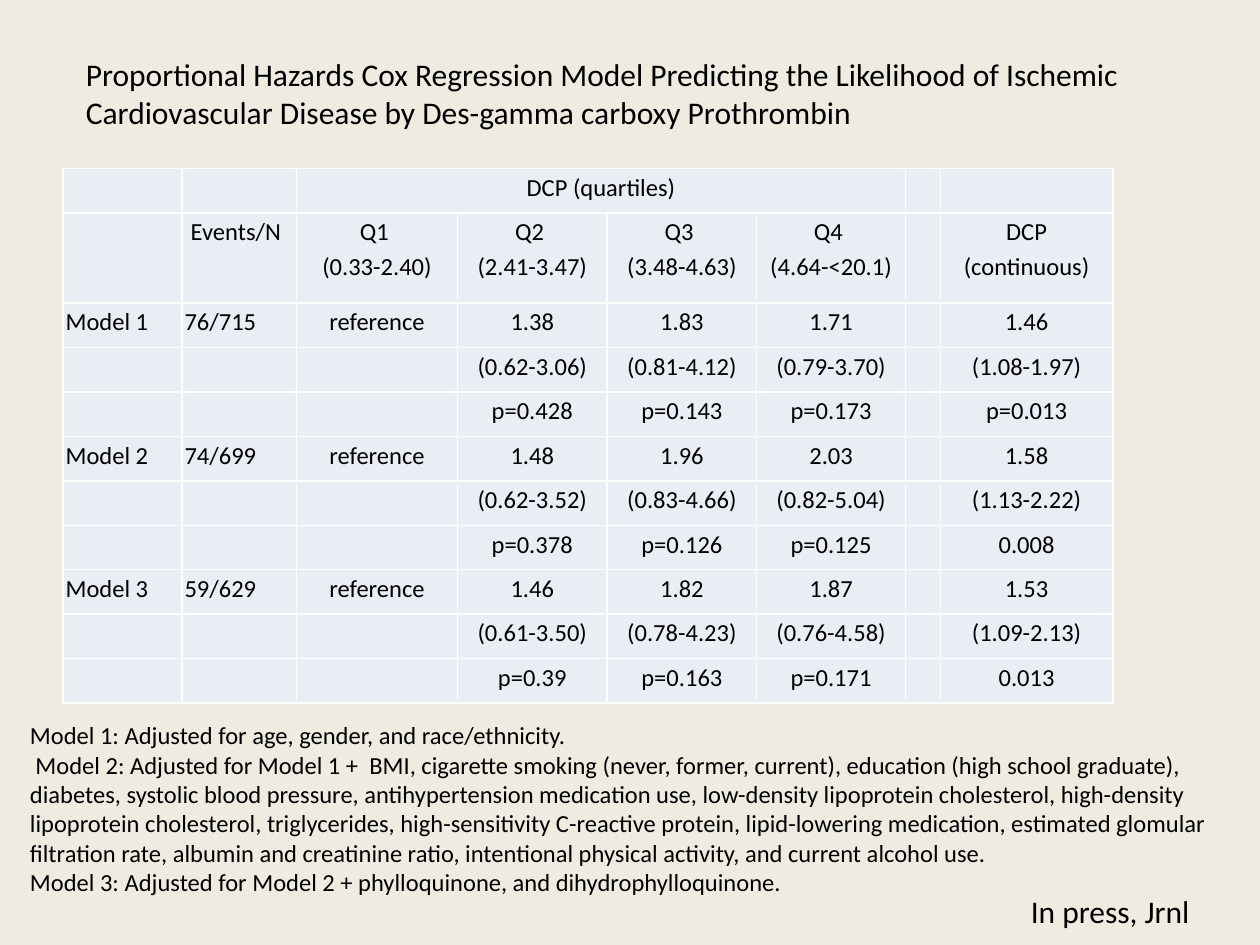
import pptx
import pptx.dml.color
import pptx.enum.text
import pptx.oxml
import pptx.oxml.ns
import pptx.util

Pt = pptx.util.Pt
RGBColor = pptx.dml.color.RGBColor
ALIGN = pptx.enum.text.PP_ALIGN

BACKGROUND = RGBColor(0xEE, 0xEC, 0xE1)
CELL_FILL = RGBColor(0xE9, 0xED, 0xF4)
BORDER = RGBColor(0xFF, 0xFF, 0xFF)
BLACK = RGBColor(0, 0, 0)

COLS = [68, 65.5, 92, 85.5, 85.5, 85, 20, 98.5]
ROWS = [25.5, 51.5] + [25.4] * 9
HEADERS = [
    ["", "", "DCP (quartiles)", "", "", "", "", ""],
    ["", "Events/N", "Q1 \n(0.33-2.40)", "Q2 \n(2.41-3.47)", "Q3 \n(3.48-4.63)",
     "Q4 \n(4.64-<20.1)", "", "DCP (continuous)"],
]
# Per model: events/N, then hazard ratio, interval and p value for Q2, Q3, Q4, continuous
MODELS = [
    ("76/715", ["1.38", "1.83", "1.71", "1.46"],
     ["(0.62-3.06)", "(0.81-4.12)", "(0.79-3.70)", "(1.08-1.97)"],
     ["p=0.428", "p=0.143", "p=0.173", "p=0.013"]),
    ("74/699", ["1.48", "1.96", "2.03", "1.58"],
     ["(0.62-3.52)", "(0.83-4.66)", "(0.82-5.04)", "(1.13-2.22)"],
     ["p=0.378", "p=0.126", "p=0.125", "0.008"]),
    ("59/629", ["1.46", "1.82", "1.87", "1.53"],
     ["(0.61-3.50)", "(0.78-4.23)", "(0.76-4.58)", "(1.09-2.13)"],
     ["p=0.39", "p=0.163", "p=0.171", "0.013"]),
]
NOTES = """Model 1: Adjusted for age, gender, and race/ethnicity.
 Model 2: Adjusted for Model 1 +  BMI, cigarette smoking (never, former, current), \
education (high school graduate), diabetes, systolic blood pressure, antihypertension \
medication use, low-density lipoprotein cholesterol, high-density lipoprotein cholesterol, \
triglycerides, high-sensitivity C-reactive protein, lipid-lowering medication, estimated \
glomular filtration rate, albumin and creatinine ratio, intentional physical activity, \
and current alcohol use.
Model 3: Adjusted for Model 2 + phylloquinone, and dihydrophylloquinone."""


class SlideBuilder:
    font = "Calibri"

    def __init__(self, s):
        self.s = s
        s.background.fill.solid()
        s.background.fill.fore_color.rgb = BACKGROUND

    def style(self, tf, size):
        for p in tf.paragraphs:
            for r in p.runs:
                r.font.name = self.font
                r.font.size = Pt(size)
                r.font.color.rgb = BLACK

    def text(self, x, y, w, h, text, size, wrap=True):
        tf = self.s.shapes.add_textbox(Pt(x), Pt(y), Pt(w), Pt(h)).text_frame
        tf.word_wrap = wrap
        tf.text = text
        self.style(tf, size)

    def borders(self, cell):
        tcPr = cell._tc.get_or_add_tcPr()
        for side in ("lnL", "lnR", "lnT", "lnB"):
            tcPr.append(pptx.oxml.parse_xml(
                f'<a:{side} {pptx.oxml.ns.nsdecls("a")} w="{Pt(1)}"><a:solidFill>'
                f'<a:srgbClr val="{BORDER}"/></a:solidFill></a:{side}>'))

    def cell(self, cell, text, centred, inset):
        self.borders(cell)
        cell.fill.solid()
        cell.fill.fore_color.rgb = CELL_FILL
        cell.margin_left = cell.margin_right = Pt(inset)
        cell.margin_top = cell.margin_bottom = 0
        if text:
            tf = cell.text_frame
            tf.text = text
            for p in tf.paragraphs:
                p.alignment = ALIGN.CENTER if centred else ALIGN.LEFT
                p.line_spacing = 1.15
            self.style(tf, 14)

    def table(self, x, y, cols, rows, data):
        table = self.s.shapes.add_table(len(rows), len(cols), Pt(x), Pt(y),
                                        Pt(sum(cols)), Pt(sum(rows))).table
        table.first_row = table.horz_banding = False
        for col, w in zip(table.columns, cols):
            col.width = Pt(w)
        for row, h in zip(table.rows, rows):
            row.height = Pt(h)
        for i, values in enumerate(data):
            for j, value in enumerate(values):
                wide = value == "Events/N" or value.startswith("DCP")
                self.cell(table.cell(i, j), value, j > 1, 5 if wide else 1.5)
        return table


def model_rows(number, events, *lines):
    labels = [[f"Model {number}", events, "reference"]] + [[""] * 3] * 2
    return [label + line[:3] + [""] + line[3:] for label, line in zip(labels, lines)]


def main():
    prs = pptx.Presentation()
    prs.slide_width, prs.slide_height = Pt(720), Pt(540)
    b = SlideBuilder(prs.slides.add_slide(prs.slide_layouts[6]))

    # Regression table
    data = list(HEADERS)
    for number, model in enumerate(MODELS, 1):
        data += model_rows(number, *model)
    table = b.table(36, 96.2, COLS, ROWS, data)
    table.cell(0, 2).merge(table.cell(0, 5))

    # Model notes, title and citation
    b.text(10, 408, 708, 109, NOTES, 14)
    b.text(42, 28, 618, 51, "Proportional Hazards Cox Regression Model Predicting the "
           "Likelihood of Ischemic Cardiovascular Disease by Des-gamma carboxy Prothrombin", 18)
    b.text(582, 506, 119, 29, "In press, Jrnl", 18, wrap=False)

    prs.save("out.pptx")


if __name__ == "__main__":
    main()
